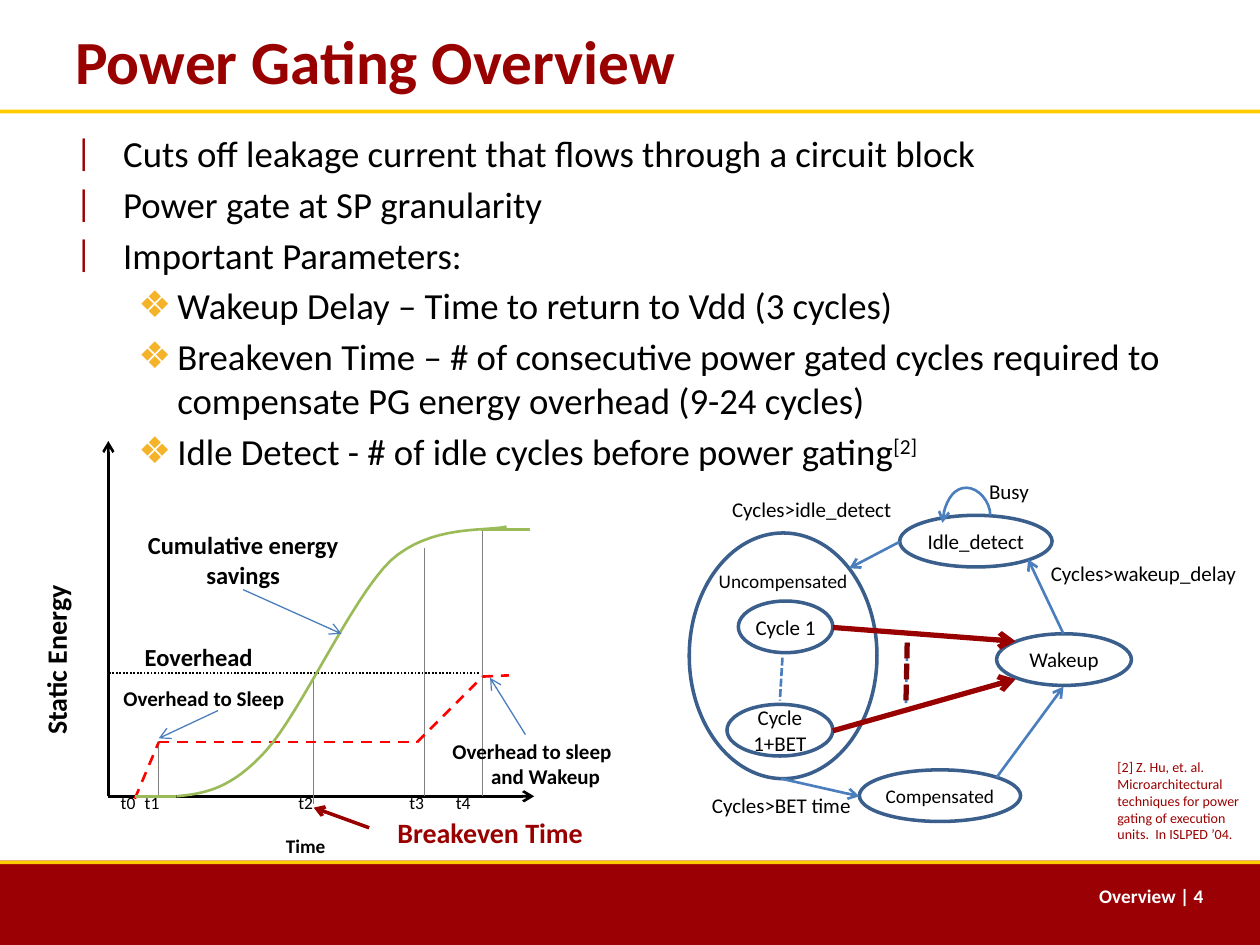
from dataclasses import dataclass
from lxml import etree
from pptx import Presentation
from pptx.dml.color import RGBColor
from pptx.enum.dml import MSO_LINE
from pptx.enum.shapes import MSO_CONNECTOR, MSO_SHAPE
from pptx.enum.text import MSO_ANCHOR, PP_ALIGN
from pptx.oxml.ns import qn
from pptx.util import Inches, Pt

LEFT, CENTER, RIGHT = PP_ALIGN.LEFT, PP_ALIGN.CENTER, PP_ALIGN.RIGHT
TOP, MIDDLE = MSO_ANCHOR.TOP, MSO_ANCHOR.MIDDLE
DASH, DOT, SHORT_DASH = MSO_LINE.DASH, MSO_LINE.ROUND_DOT, MSO_LINE.SQUARE_DOT
STRAIGHT, CURVE = MSO_CONNECTOR.STRAIGHT, MSO_CONNECTOR.CURVE
RECTANGLE, OVAL = MSO_SHAPE.RECTANGLE, MSO_SHAPE.OVAL

BLACK = RGBColor(0x00, 0x00, 0x00)
WHITE = RGBColor(0xFF, 0xFF, 0xFF)
CRIMSON = RGBColor(0x99, 0x00, 0x00)
FOOTER_RED = RGBColor(0x9A, 0x00, 0x04)
MAROON = RGBColor(0x80, 0x00, 0x00)
RED = RGBColor(0xFF, 0x00, 0x00)
YELLOW = RGBColor(0xFF, 0xCC, 0x00)
AMBER = RGBColor(0xF4, 0xB3, 0x29)
GRAY = RGBColor(0x80, 0x80, 0x80)
GREEN = RGBColor(0x9B, 0xBB, 0x59)
BLUE = RGBColor(0x4B, 0x7E, 0xBC)
NAVY = RGBColor(0x3A, 0x5F, 0x8C)

FONT = "Calibri"
COLUMNS, ROWS = 100, 75
CELL = Inches(0.1)


@dataclass
class Box:
    page: object
    left: float
    top: float
    width: float
    height: float

    def point(self, x, y):
        return round((self.left + x) * CELL), round((self.top + y) * CELL)

    def frame(self, x, y, width, height):
        return *self.point(x, y), round(width * CELL), round(height * CELL)


def add_span(para, text, size, color=BLACK, bold=False):
    span = para.add_run()
    span.text = text
    font = span.font
    font.name, font.size, font.bold = FONT, Pt(size), bold
    font.color.rgb = color
    return span


def set_frame(frame, anchor=TOP, inset=True, wrap=True):
    frame.word_wrap = wrap
    frame.vertical_anchor = anchor
    if not inset:
        frame.margin_left = frame.margin_right = 0
        frame.margin_top = frame.margin_bottom = 0


def add_label(box, place, text, size, color=BLACK, bold=False, align=LEFT,
              anchor=TOP, inset=True, wrap=True):
    label = box.page.shapes.add_textbox(*box.frame(*place))
    set_frame(label.text_frame, anchor, inset, wrap)
    para = label.text_frame.paragraphs[0]
    para.alignment = align
    add_span(para, text, size, color, bold)
    return label


def add_bar(box, place, color):
    bar = box.page.shapes.add_shape(RECTANGLE, *box.frame(*place))
    bar.shadow.inherit = False
    bar.fill.solid()
    bar.fill.fore_color.rgb = color
    bar.line.fill.background()


def add_state(box, place, text, size=12, anchor=MIDDLE):
    state = box.page.shapes.add_shape(OVAL, *box.frame(*place))
    state.shadow.inherit = False
    state.fill.background()
    state.line.color.rgb, state.line.width = NAVY, Pt(2)
    set_frame(state.text_frame, anchor, inset=False)
    para = state.text_frame.paragraphs[0]
    para.alignment = CENTER
    add_span(para, text, size)


def add_line(box, start, end, color=BLUE, width=1.5, dash=None, arrow=False, kind=STRAIGHT):
    line = box.page.shapes.add_connector(kind, *box.point(*start), *box.point(*end))
    line.line.color.rgb, line.line.width = color, Pt(width)
    if dash:
        line.line.dash_style = dash
    if arrow:
        etree.SubElement(line.line._get_or_add_ln(), qn("a:tailEnd"), type="arrow")
    etree.SubElement(line._element.spPr, qn("a:effectLst"))
    return line


def bezier(start, first, second, end, steps=16):
    for step in range(1, steps + 1):
        t = step / steps
        weights = (1 - t) ** 3, 3 * t * (1 - t) ** 2, 3 * t * t * (1 - t), t ** 3
        yield tuple(sum(w * p[axis] for w, p in zip(weights, (start, first, second, end)))
                    for axis in (0, 1))


def add_bullet(para, symbol, color, margin, indent):
    props = para._p.get_or_add_pPr()
    props.set("marL", str(Inches(margin)))
    props.set("indent", str(-Inches(indent)))
    holder = etree.SubElement(props, qn("a:buClr"))
    etree.SubElement(holder, qn("a:srgbClr"), val=str(color))
    etree.SubElement(props, qn("a:buFont"), typeface=FONT)
    etree.SubElement(props, qn("a:buChar"), char=symbol)


def draw_header(box):
    add_label(box, (5, 0.8, 90, 7.9), "Power Gating Overview", 35, CRIMSON, True, anchor=MIDDLE)
    add_bar(box, (0, box.height - 0.3, box.width, 0.3), YELLOW)


def draw_footer(box):
    add_bar(box, (0, 0, box.width, box.height), FOOTER_RED)
    add_bar(box, (0, 0, box.width, 0.3), YELLOW)
    add_label(box, (78.7, 1.4, 17.8, 3.5), "Overview | 4", 11, WHITE, True, RIGHT)


def draw_bullets(box):
    points = [
        (0, "Cuts off leakage current that flows through a circuit block"),
        (0, "Power gate at SP granularity"),
        (0, "Important Parameters:"),
        (1, "Wakeup Delay – Time to return to Vdd (3 cycles)"),
        (1, "Breakeven Time – # of consecutive power gated cycles required to "
            "compensate PG energy overhead (9-24 cycles)"),
        (1, "Idle Detect - # of idle cycles before power gating"),
    ]
    styles = [("|", CRIMSON, 0.38, 0.38), ("❖", AMBER, 0.81, 0.31)]
    body = box.page.shapes.add_textbox(*box.frame(0, 0, box.width, box.height))
    frame = body.text_frame
    set_frame(frame)
    for index, (level, text) in enumerate(points):
        para = frame.add_paragraph() if index else frame.paragraphs[0]
        para.level = level
        if index:
            para.space_before = Pt(3.8)
        add_bullet(para, *styles[level])
        add_span(para, text, 21)
    citation = add_span(para, "[2]", 21)
    citation._r.get_or_add_rPr().set("baseline", "30000")


def draw_energy_plot(box):
    base = box.height
    add_label(box, (13.1, 30.7, 7.6, 2.9), "Time", 11, bold=True)
    axis_title = add_label(box, (-6, 6.7, 4.7, 17.6), "Static Energy", 16, bold=True)
    axis_title.text_frame._txBody.bodyPr.set("vert", "vert270")
    for end in ((box.width, base), (0, 0)):
        add_line(box, (0, base), end, BLACK, arrow=True)

    for x, bottom, top in ((16.3, 28.8, 19), (25.1, base, 8.5), (29.7, base, 7.1), (4, base, 23.8)):
        add_line(box, (x, bottom), (x, top), GRAY, 0.75)
    for name, x in (("t0", 0), ("t1", 1.9), ("t2", 14.1), ("t3", 22.9), ("t4", 26.6)):
        add_label(box, (x, 27.4, 5.5, 2.7), name, 10)

    add_line(box, (29.4, 18.4), (0, 18.4), BLACK, 1, DOT)
    add_label(box, (1.9, 15.5, 13.1, 3.4), "Eoverhead", 14, bold=True)

    overhead = [(2.1, 28.4), (4, 23.9), (24.5, 23.9), (29.7, 18.7), (31.8, 18.6)]
    for start, end in zip(overhead, overhead[1:]):
        add_line(box, start, end, RED, 1.5, DASH)

    curve = [(5.4, 28.2), (7.5, 28), (9.7, 27.7), (12.5, 24.6), (15.3, 21.5), (19.3, 12.5),
             (22.4, 9.5), (25.6, 6.6), (30, 7.2), (31.6, 6.8)]
    outline = box.page.shapes.build_freeform(*box.point(*curve[0]))
    outline.add_line_segments(
        [box.point(*spot) for i in range(0, 9, 3) for spot in bezier(*curve[i:i + 4])],
        close=False)
    savings = outline.convert_to_shape()
    savings.shadow.inherit = False
    savings.fill.background()
    savings.line.color.rgb, savings.line.width = GREEN, Pt(1.5)
    for start, end in (((2.1, base), (5.4, base)), ((29.6, 7), (33.5, 7))):
        add_line(box, start, end, GREEN)

    for start, end in (((33.1, 23.3), (30.3, 18.8)), ((8.7, 21.4), (4, 23.6)),
                       ((10.7, 11.8), (18.5, 15.3))):
        add_line(box, start, end, BLUE, 0.75, arrow=True)
    add_label(box, (1.6, 7.1, 18.2, 4.7), "Cumulative energy savings", 14, bold=True,
              align=CENTER, inset=False)
    add_label(box, (1.2, 19.4, 15.2, 2), "Overhead to Sleep", 12, bold=True, inset=False)
    wakeup = add_label(box, (27.3, 23.6, 14.8, 4), "Overhead to sleep", 12, bold=True, inset=False)
    second = wakeup.text_frame.add_paragraph()
    second.alignment = CENTER
    add_span(second, "and Wakeup", 12, bold=True)

    add_label(box, (20.6, 29.1, 19.4, 3.9), "Breakeven Time", 16, CRIMSON, True, CENTER,
              MIDDLE, wrap=False)
    add_line(box, (20.7, 30.7), (16.3, 29.1), CRIMSON, 2, arrow=True)


def draw_state_machine(box):
    add_state(box, (0, 4.3, 14.9, 19.5), "Uncompensated", 11, TOP)
    for place, text, size in (((24.4, 12.3, 10.7, 4.1), "Wakeup", 12),
                              ((3.9, 9.7, 7.5, 4.1), "Cycle 1", 12),
                              ((3, 17.9, 8.4, 4.1), "Cycle 1+BET", 12),
                              ((13.5, 23.1, 12.8, 4.1), "Compensated", 11),
                              ((16.7, 2.9, 12.1, 4.1), "Idle_detect", 12)):
        add_state(box, place, text, size)

    for start, end in (((29.7, 12.3), (26.9, 6.4)), ((24.4, 23.7), (29.7, 16.5)),
                       ((16.7, 5), (12.7, 7.1)), ((7.3, 23.8), (13.5, 25.2))):
        add_line(box, start, end, arrow=True)
    add_line(box, (7.4, 14.2), (7.2, 17.6), dash=SHORT_DASH)
    for color, dash_color, width in ((BLUE, BLUE, 1.5), (CRIMSON, MAROON, 3)):
        add_line(box, (11.4, 11.8), (25.9, 12.9), color, width, arrow=True)
        add_line(box, (11.4, 20), (25.9, 15.9), color, width, arrow=True)
        add_line(box, (17.3, 13), (17.2, 17.9), dash_color, width, SHORT_DASH)

    loop = add_line(box, (22.3, 5.1), (21.7, 1.3), arrow=True, kind=CURVE)
    loop._element.spPr.find(qn("a:xfrm")).set("rot", "16200000")
    adjustments = loop._element.spPr.find(qn("a:prstGeom")).find(qn("a:avLst"))
    etree.SubElement(adjustments, qn("a:gd"), name="adj1", fmla="val -366100")

    for place, text in (((28.7, 6.5, 16.6, 2), "Cycles>wakeup_delay"),
                        ((3.4, 1.4, 14.5, 2), "Cycles>idle_detect"),
                        ((1.8, 24.9, 14.5, 2), "Cycles>BET time"),
                        ((23.8, 0, 3.6, 2), "Busy")):
        add_label(box, place, text, 12, inset=False)


def draw_reference(box):
    add_label(box, (0, 0, box.width, box.height),
              "[2] Z. Hu, et. al. Microarchitectural techniques for power gating of "
              "execution units.  In ISLPED ’04.", 8, CRIMSON, anchor=MIDDLE)


def main():
    deck = Presentation()
    deck.slide_width, deck.slide_height = COLUMNS * CELL, ROWS * CELL
    page = deck.slides.add_slide(deck.slide_layouts[6])
    draw_footer(Box(page, 0, 68.3, COLUMNS, 6.7))
    draw_header(Box(page, 0, 0, COLUMNS, 9))
    draw_bullets(Box(page, 5, 9.9, 90, 58.4))
    draw_energy_plot(Box(page, 8.6, 35, 33.8, 28.2))
    draw_state_machine(Box(page, 54.7, 38, 45.3, 27.2))
    draw_reference(Box(page, 87.7, 59.3, 12.7, 8.5))
    deck.save("out.pptx")


if __name__ == "__main__":
    main()
